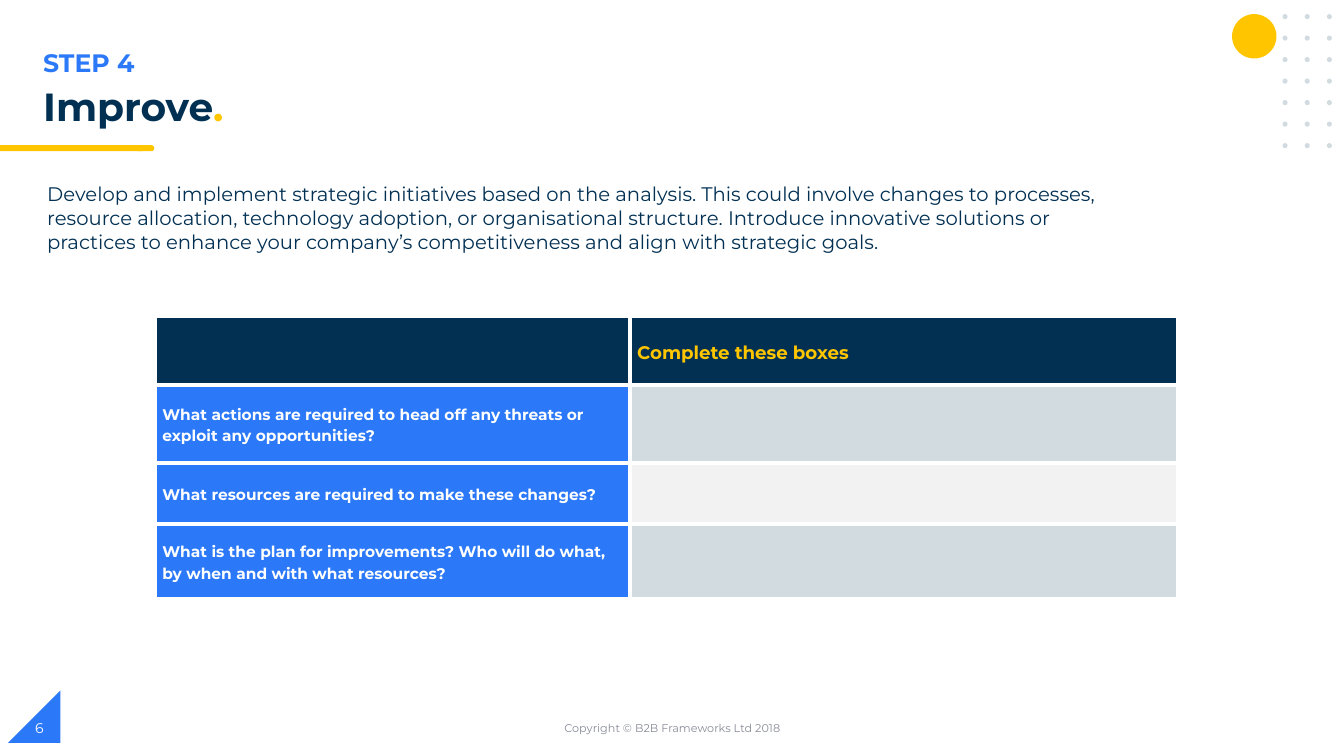
from dataclasses import dataclass
from itertools import product

from lxml import etree
from pptx import Presentation
from pptx.dml.color import RGBColor
from pptx.enum.shapes import MSO_SHAPE
from pptx.enum.text import MSO_ANCHOR, PP_ALIGN
from pptx.oxml.ns import qn
from pptx.slide import Slide
from pptx.table import _Cell
from pptx.util import Inches, Pt

OVAL = MSO_SHAPE.OVAL
RECTANGLE = MSO_SHAPE.RECTANGLE
TERMINATOR = MSO_SHAPE.FLOWCHART_TERMINATOR
TRIANGLE = MSO_SHAPE.RIGHT_TRIANGLE
LEFT, CENTER = PP_ALIGN.LEFT, PP_ALIGN.CENTER
TOP, MIDDLE = MSO_ANCHOR.TOP, MSO_ANCHOR.MIDDLE

FONT = "Montserrat"
NAVY, BLUE, YELLOW = "023053", "2B79F8", "FFC600"
MIST, PALE, WHITE, GRAY = "D1DBE0", "F2F2F2", "FFFFFF", "888C97"


@dataclass(frozen=True)
class Mark:
    kind: int
    left: float
    top: float
    width: float
    height: float
    fill: str
    flipped: bool = False


@dataclass(frozen=True)
class Span:
    text: str
    size: float
    color: str
    bold: bool = False


@dataclass(frozen=True)
class Label:
    left: float
    top: float
    width: float
    height: float
    spans: tuple[Span, ...]
    align: int = LEFT
    anchor: int = TOP
    line_spacing: float = 1.0


@dataclass(frozen=True)
class Row:
    height: float
    text: str
    answer: str
    fill: str
    answer_fill: str


MARKS = [
    Mark(TRIANGLE, 0.08, 6.85, 0.52, 0.52, BLUE, flipped=True),
    Mark(TERMINATOR, 1.34, 1.44, 0.19, 0.06, YELLOW),
    Mark(RECTANGLE, 0, 1.44, 1.41, 0.06, YELLOW),
    Mark(OVAL, 12.22, 0.14, 0.44, 0.44, YELLOW),
]
DOTS = [
    Mark(OVAL, 12.72 + 0.22 * column, 0.14 + 1.28 / 6 * row, 0.05, 0.05, MIST)
    for row, column in product(range(7), range(3))
]

INTRODUCTION = (
    "Develop and implement strategic initiatives based on the analysis. "
    "This could involve changes to processes, resource allocation, technology "
    "adoption, or organisational structure. Introduce innovative solutions or "
    "practices to enhance your company’s competitiveness and align with "
    "strategic goals."
)
LABELS = [
    Label(0.33, 0.42, 6.69, 0.4, (Span("STEP 4", 18, BLUE, True),)),
    Label(0.33, 0.82, 12.08, 0.56,
          (Span("Improve", 28, NAVY, True), Span(".", 28, YELLOW, True)),
          line_spacing=0.9),
    Label(0.37, 1.76, 11.06, 0.81, (Span(INTRODUCTION, 14, NAVY),)),
    Label(4.42, 7.02, 4.5, 0.4,
          (Span("Copyright © B2B Frameworks Ltd 2018", 8, GRAY),), CENTER, MIDDLE),
    Label(0.25, 7.02, 3, 0.4, (Span("6", 10, WHITE),), anchor=MIDDLE),
]

COLUMN_WIDTHS = (4.71, 5.43)
ROWS = [
    Row(0.68, "", "Complete these boxes", NAVY, NAVY),
    Row(0.77, "What actions are required to head off any threats or exploit any "
        "opportunities?", "", BLUE, MIST),
    Row(0.61, "What resources are required to make these changes?", "", BLUE, PALE),
    Row(0.74, "What is the plan for improvements? Who will do what, by when and "
        "with what resources?", "", BLUE, MIST),
]


def rgb(value: str) -> RGBColor:
    return RGBColor.from_string(value)


def assign(target: object, values: dict[str, object]) -> None:
    for name, value in values.items():
        setattr(target, name, value)


def write(para: object, spans: tuple[Span, ...]) -> None:
    for span in spans:
        run = para.add_run()
        run.text = span.text
        assign(run.font, {"name": FONT, "size": Pt(span.size), "bold": span.bold})
        run.font.color.rgb = rgb(span.color)


def draw_mark(page: Slide, mark: Mark) -> None:
    shape = page.shapes.add_shape(mark.kind, Inches(mark.left), Inches(mark.top),
                                  Inches(mark.width), Inches(mark.height))
    shape.shadow.inherit = False
    shape.fill.solid()
    shape.fill.fore_color.rgb = rgb(mark.fill)
    shape.line.fill.background()
    if mark.flipped:
        shape.element.spPr.find(qn("a:xfrm")).set("flipH", "1")


def draw_label(page: Slide, label: Label) -> None:
    box = page.shapes.add_textbox(Inches(label.left), Inches(label.top),
                                  Inches(label.width), Inches(label.height))
    assign(box.text_frame, {"word_wrap": True, "vertical_anchor": label.anchor})
    para = box.text_frame.paragraphs[0]
    assign(para, {"alignment": label.align, "line_spacing": label.line_spacing})
    write(para, label.spans)


def add_borders(cell: _Cell) -> None:
    properties = cell._tc.get_or_add_tcPr()
    for side in ("lnL", "lnR", "lnT", "lnB"):
        line = etree.SubElement(properties, qn(f"a:{side}"), w=str(Pt(3)))
        fill = etree.SubElement(line, qn("a:solidFill"))
        etree.SubElement(fill, qn("a:srgbClr"), val=WHITE)


def fill_cell(cell: _Cell, fill: str, span: Span) -> None:
    add_borders(cell)
    cell.fill.solid()
    cell.fill.fore_color.rgb = rgb(fill)
    assign(cell, {"vertical_anchor": MIDDLE,
                  "margin_left": Inches(0.07), "margin_right": Inches(0.07),
                  "margin_top": 0, "margin_bottom": 0})
    if span.text:
        para = cell.text_frame.paragraphs[0]
        para.line_spacing = 1.15
        write(para, (span,))


def draw_table(page: Slide) -> None:
    frame = page.shapes.add_table(
        len(ROWS), len(COLUMN_WIDTHS), Inches(1.54), Inches(3.14),
        Inches(sum(COLUMN_WIDTHS)), Inches(sum(row.height for row in ROWS)))
    table = frame.table
    assign(table, {"first_row": False, "horz_banding": False})
    for column, width in zip(table.columns, COLUMN_WIDTHS):
        column.width = Inches(width)
    for index, row in enumerate(ROWS):
        table.rows[index].height = Inches(row.height)
        fill_cell(table.cell(index, 0), row.fill, Span(row.text, 11, WHITE, True))
        fill_cell(table.cell(index, 1), row.answer_fill,
                  Span(row.answer, 13, YELLOW, True))


def main() -> None:
    deck = Presentation()
    assign(deck, {"slide_width": Inches(13.33), "slide_height": Inches(7.5)})
    page = deck.slides.add_slide(deck.slide_layouts[6])
    for mark in MARKS + DOTS:
        draw_mark(page, mark)
    for label in LABELS:
        draw_label(page, label)
    draw_table(page)
    deck.save("out.pptx")


if __name__ == "__main__":
    main()
